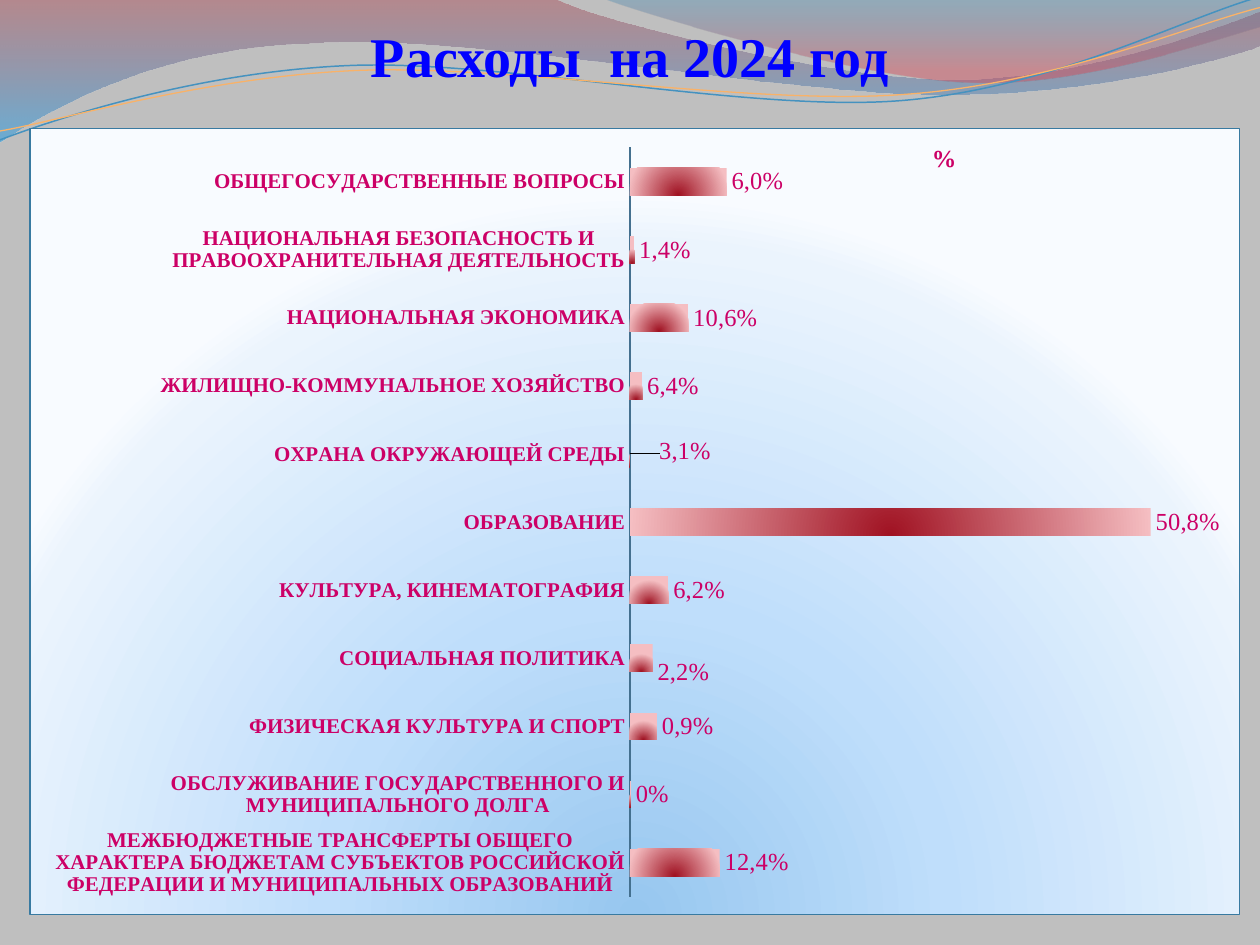
from dataclasses import dataclass
from math import cos, radians, sin
from typing import Optional

from lxml.etree import SubElement
from pptx import Presentation
from pptx.chart.data import CategoryChartData
from pptx.dml.color import RGBColor
from pptx.enum.chart import XL_CHART_TYPE, XL_LABEL_POSITION, XL_TICK_MARK
from pptx.enum.text import MSO_ANCHOR, MSO_AUTO_SIZE, PP_ALIGN
from pptx.oxml import parse_xml
from pptx.oxml.ns import nsdecls, qn
from pptx.util import Inches, Pt

FONT = "Times New Roman"
PINK = "CC0066"
W, H = Inches(10), Inches(7.5)
TILT = 2.7
GLOW = '<a:path path="circle"><a:fillToRect l="50000" t="130000" r="50000" b="-30000"/></a:path>'
DOWN = '<a:lin ang="5400000" scaled="0"/>'
NO_LEADERS = (f'<c:extLst {nsdecls("c")}><c:ext uri="{{CE6537A1-D6FC-4f65-9D91-7224C49458BB}}" '
              'xmlns:c15="http://schemas.microsoft.com/office/drawing/2012/chart">'
              '<c15:showLeaderLines val="0"/></c:ext></c:extLst>')


@dataclass
class Wave:
    start: tuple
    segments: list
    stops: Optional[list] = None
    line: Optional[tuple] = None
    pivot: Optional[tuple] = None


@dataclass
class Expense:
    name: str
    value: float
    label: str
    shift: Optional[tuple] = None


WAVES = [
    Wave((0, 0), [
        (4.4, -0.01),
        (4.76, 0.17, 6.64, 0.63, 7.58, 0.63), (8.53, 0.63, 9.58, 0.26, 10, 0.09),
        (10.01, 0.36),
        (9.83, 0.44, 8.7, 0.76, 7.46, 0.75), (6.22, 0.75, 3.82, 0.28, 2.57, 0.34),
        (1.29, 0.36, 0.46, 0.83, -0.01, 1.13),
        (0, 0),
    ], stops=[(0, "A84752", 45), (100, "249FE6", 55)]),
    Wave((4.79, -0.01), [
        (5.09, 0.11, 6.82, 0.62, 7.69, 0.65), (8.56, 0.69, 9.61, 0.32, 10, 0.21),
        (10, 0), (4.79, -0.01),
    ], stops=[(0, "2A7EAF", 30), (80, "D24B5A", 45)]),
    Wave((0, 1.11), [
        (0.48, 0.93, 1.58, 0.57, 2.77, 0.52), (3.95, 0.47, 5.93, 0.89, 7.13, 0.8),
        (8.33, 0.71, 9.38, 0.15, 9.98, -0.02),
    ], line=("4592BF", 0.85), pivot=(4.99, 0.57)),
    Wave((0, 1.04), [
        (0.47, 0.96, 1.64, 0.61, 2.83, 0.56), (4.03, 0.51, 5.97, 0.84, 7.17, 0.75),
        (8.36, 0.67, 9.41, 0.21, 10, 0.06),
    ], line=("F9B268", 0.75), pivot=(5, 0.59)),
]

EXPENSES = [
    Expense("МЕЖБЮДЖЕТНЫЕ ТРАНСФЕРТЫ ОБЩЕГО ХАРАКТЕРА БЮДЖЕТАМ СУБЪЕКТОВ "
            "РОССИЙСКОЙ ФЕДЕРАЦИИ И МУНИЦИПАЛЬНЫХ ОБРАЗОВАНИЙ", 0.103, "12,4%"),
    Expense("ОБСЛУЖИВАНИЕ ГОСУДАРСТВЕННОГО И МУНИЦИПАЛЬНОГО ДОЛГА", 0.001, "0%"),
    Expense("ФИЗИЧЕСКАЯ КУЛЬТУРА И СПОРТ", 0.031, "0,9%"),
    Expense("СОЦИАЛЬНАЯ ПОЛИТИКА", 0.026, "2,2%", (0, 1.8)),
    Expense("КУЛЬТУРА, КИНЕМАТОГРАФИЯ", 0.044, "6,2%"),
    Expense("ОБРАЗОВАНИЕ", 0.598, "50,8%"),
    Expense("ОХРАНА ОКРУЖАЮЩЕЙ СРЕДЫ", 0, "3,1%", (2, -0.4)),
    Expense("ЖИЛИЩНО-КОММУНАЛЬНОЕ ХОЗЯЙСТВО", 0.014, "6,4%"),
    Expense("НАЦИОНАЛЬНАЯ ЭКОНОМИКА", 0.067, "10,6%"),
    Expense("НАЦИОНАЛЬНАЯ БЕЗОПАСНОСТЬ И ПРАВООХРАНИТЕЛЬНАЯ ДЕЯТЕЛЬНОСТЬ", 0.005, "1,4%"),
    Expense("ОБЩЕГОСУДАРСТВЕННЫЕ ВОПРОСЫ", 0.111, "6,0%"),
]


def rgb(color: str) -> RGBColor:
    return RGBColor.from_string(color)


def share(x: float, y: float, w: float, h: float) -> list:
    return [int(pct * side / 100) for pct, side in zip((x, y, w, h), (W, H, W, H))]


def style_font(font, size: float, color: str, bold: bool) -> None:
    font.name, font.size, font.bold = FONT, Pt(size), bold
    font.color.rgb = rgb(color)


def gradient(stops: list, direction: str):
    marks = ""
    for pos, color, *alpha in stops:
        opacity = "".join(f'<a:alpha val="{a * 1000}"/>' for a in alpha)
        marks += f'<a:gs pos="{pos * 1000}"><a:srgbClr val="{color}">{opacity}</a:srgbClr></a:gs>'
    return parse_xml(f'<a:gradFill {nsdecls("a")} rotWithShape="1">'
                     f'<a:gsLst>{marks}</a:gsLst>{direction}</a:gradFill>')


def fill_gradient(fill, spPr, stops: list, direction: str) -> None:
    fill.solid()
    spPr.replace(spPr.find(qn("a:solidFill")), gradient(stops, direction))


def place(parent, anchor: str, **values) -> None:
    for layout in parent.findall(qn("c:layout")):
        parent.remove(layout)
    layout = parse_xml(f'<c:layout {nsdecls("c")}><c:manualLayout/></c:layout>')
    for tag, val in values.items():
        val = val if isinstance(val, str) else f"{val / 100:.4f}"
        SubElement(layout[0], qn(f"c:{tag}")).set("val", val)
    if anchor:
        parent.find(qn(anchor)).addnext(layout)
    else:
        parent.insert(0, layout)


def level(point: tuple, pivot: Optional[tuple]) -> tuple:
    if not pivot:
        return point
    dx, dy, a = point[0] - pivot[0], point[1] - pivot[1], radians(TILT)
    return pivot[0] + dx * cos(a) - dy * sin(a), pivot[1] + dx * sin(a) + dy * cos(a)


def draw_wave(slide, wave: Wave) -> None:
    nodes = [wave.start] + [seg[i:i + 2] for seg in wave.segments
                            for i in range(0, len(seg), 2)]
    first, *rest = [tuple(map(Inches, level(n, wave.pivot))) for n in nodes]
    builder = slide.shapes.build_freeform(*first, scale=1.0)
    builder.add_line_segments(rest, close=wave.stops is not None)
    sp = builder.convert_to_shape()
    lines = iter(list(sp._element.iter(qn("a:lnTo"))))
    for seg in wave.segments:
        line = next(lines)
        if len(seg) == 6:
            line.addprevious(parse_xml(f'<a:cubicBezTo {nsdecls("a")}/>'))
            curve = line.getprevious()
            for node in (line, next(lines), next(lines)):
                curve.append(node[0])
                node.getparent().remove(node)
    sp.shadow.inherit = False
    if wave.stops:
        fill_gradient(sp.fill, sp._element.spPr, wave.stops, DOWN)
        sp.line.fill.background()
    else:
        color, width = wave.line
        sp.rotation = -TILT
        sp.fill.background()
        sp.line.color.rgb = rgb(color)
        sp.line.width = Pt(width)


def format_title(slide, text: str) -> None:
    title = slide.shapes.title
    slide.shapes._spTree.append(title._element)
    title.left, title.top, title.width, title.height = share(0, 3.1, 100, 6.3)
    tf = title.text_frame
    tf.text = text
    tf.auto_size = MSO_AUTO_SIZE.NONE
    tf.vertical_anchor = MSO_ANCHOR.BOTTOM
    tf.margin_left = tf.margin_right = tf.margin_bottom = 0
    tf.margin_top = Inches(0.05)
    p = tf.paragraphs[0]
    p.alignment = PP_ALIGN.CENTER
    style_font(p.runs[0].font, 32, "0000FF", True)


def draw_chart(slide, expenses: list) -> None:
    data = CategoryChartData(number_format="0.0%")
    data.categories = [e.name for e in expenses]
    data.add_series("%", [e.value for e in expenses])
    box = share(2.34, 13.54, 96.1, 83.33)
    chart = slide.shapes.add_chart(XL_CHART_TYPE.BAR_CLUSTERED, *box, data).chart
    chart.has_legend = False
    style_font(chart.font, 12, PINK, True)

    root = chart._chartSpace.find(qn("c:chart"))
    spPr = parse_xml(f'<c:spPr {nsdecls("c", "a")}><a:ln w="9525"><a:solidFill>'
                     '<a:srgbClr val="387AA1"/></a:solidFill></a:ln></c:spPr>')
    spPr.insert(0, gradient([(0, "97C7EF"), (43, "BFDEFB"),
                             (93, "EBF4FD"), (100, "F8FBFF")], GLOW))
    root.addnext(spPr)
    place(root.find(qn("c:plotArea")), "", layoutTarget="inner", xMode="edge",
          yMode="edge", x=49.6, y=2.4, w=50.4, h=95.3)

    chart.has_title = True
    tf = chart.chart_title.text_frame
    tf.text = "%"
    style_font(tf.paragraphs[0].runs[0].font, 14, PINK, True)
    place(chart.chart_title._element, "c:tx", xMode="edge", yMode="edge", x=74.2, y=1.2)

    cat, val = chart.category_axis, chart.value_axis
    cat.major_tick_mark = cat.minor_tick_mark = XL_TICK_MARK.NONE
    cat.has_major_gridlines = val.has_major_gridlines = False
    cat.format.line.color.rgb = rgb("44708F")
    cat.format.line.width = Pt(0.75)
    style_font(cat.tick_labels.font, 12, PINK, True)
    val.visible = False
    val.minimum_scale, val.maximum_scale = 0, 0.7

    plot = chart.plots[0]
    plot.gap_width, plot.overlap, plot.vary_by_categories = 150, -25, False
    series = plot.series[0]
    fill_gradient(series.format.fill, series._element.get_or_add_spPr(),
                  [(0, "A01222"), (100, "F5BEC2")], GLOW)
    labels = series.data_labels
    labels.show_value = True
    labels.number_format, labels.number_format_is_linked = "0.0%", False
    labels.position = XL_LABEL_POSITION.OUTSIDE_END
    style_font(labels.font, 14, PINK, False)
    for i, expense in enumerate(expenses):
        label = series.points[i].data_label
        label.text_frame.text = expense.label
        style_font(label.text_frame.paragraphs[0].runs[0].font, 14, PINK, False)
        label.position = XL_LABEL_POSITION.OUTSIDE_END
        if expense.shift:
            x, y = expense.shift
            place(labels._element.findall(qn("c:dLbl"))[i], "c:idx", x=x, y=y)
    labels._element.append(parse_xml(NO_LEADERS))


prs = Presentation()
prs.slide_width, prs.slide_height = W, H
slide = prs.slides.add_slide(prs.slide_layouts[5])
slide.background.fill.solid()
slide.background.fill.fore_color.rgb = rgb("BFBFBF")
for wave in WAVES:
    draw_wave(slide, wave)
format_title(slide, "Расходы  на 2024 год")
draw_chart(slide, EXPENSES)
prs.save("out.pptx")
